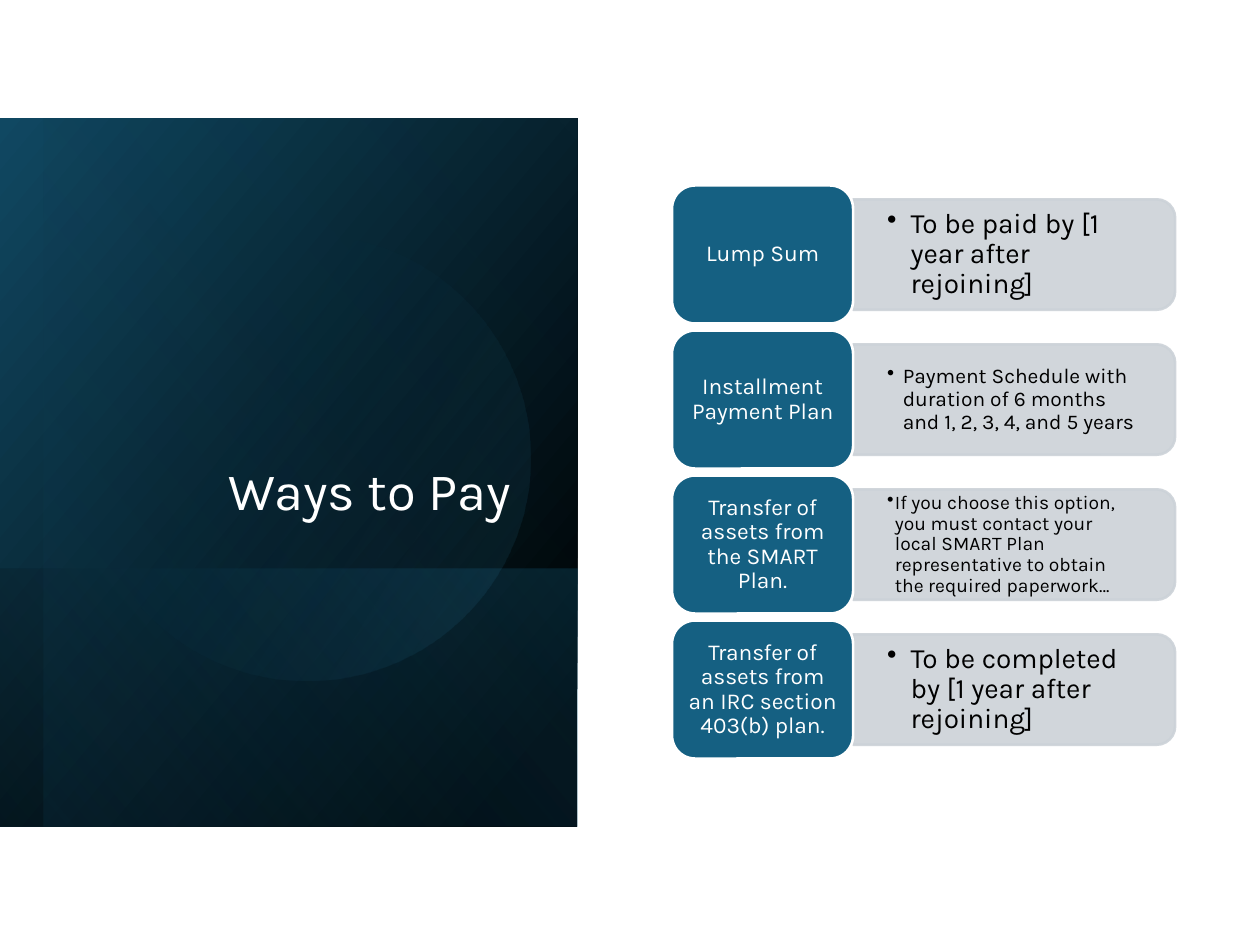
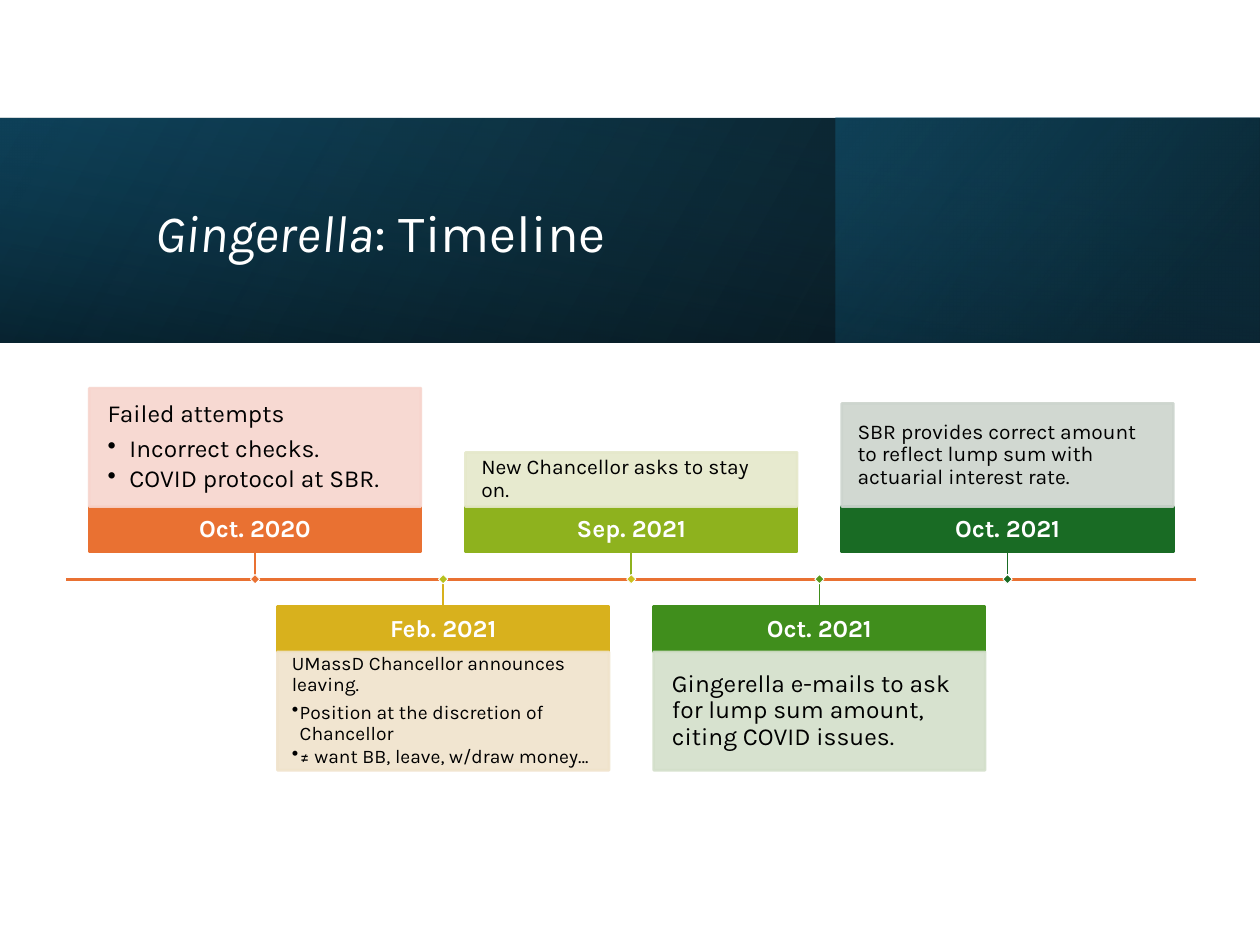
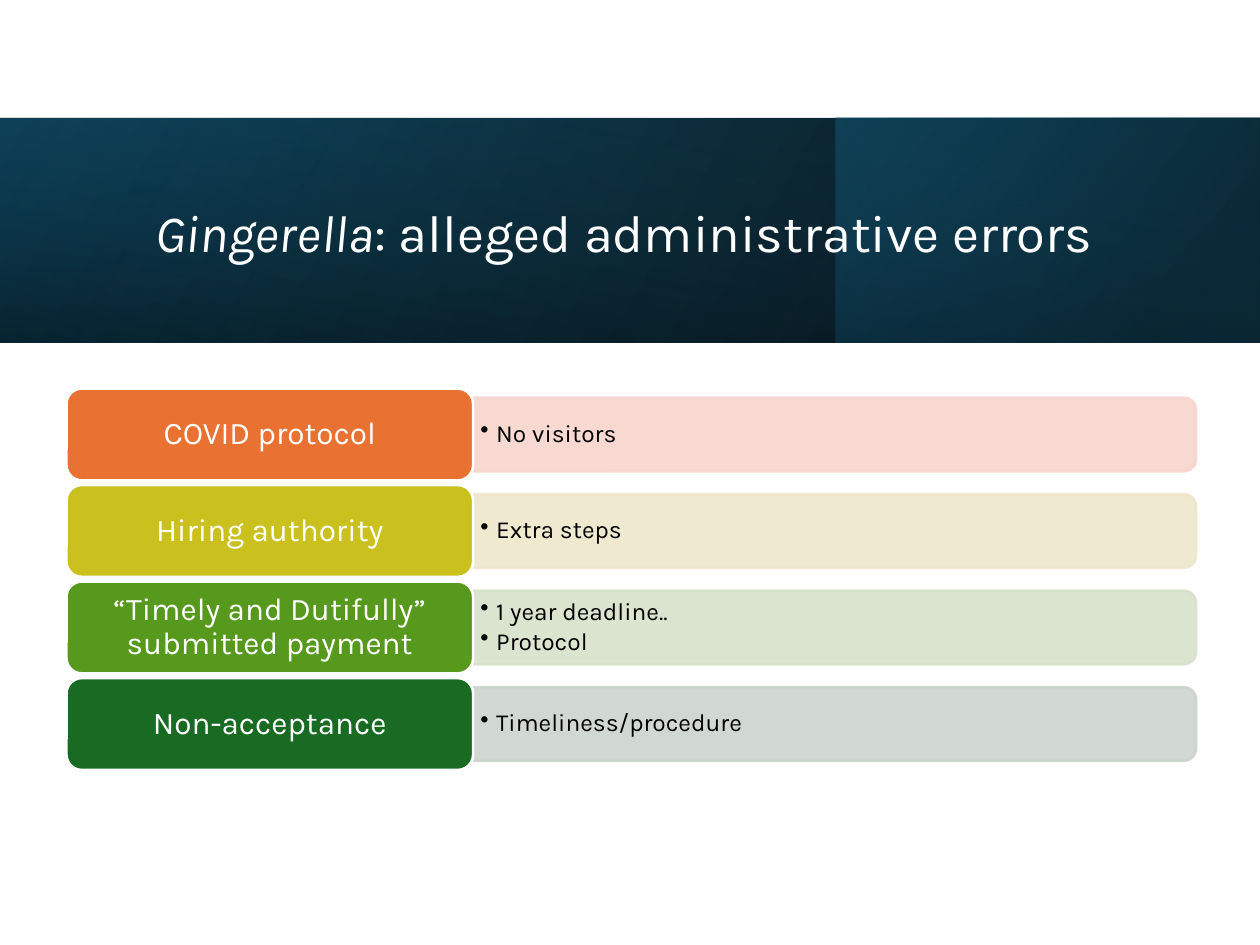
from lxml.etree import SubElement
from pptx import Presentation
from pptx.dml.color import RGBColor
from pptx.enum.shapes import MSO_CONNECTOR, MSO_SHAPE
from pptx.enum.text import MSO_ANCHOR as Anchor, PP_ALIGN as Align
from pptx.oxml.ns import qn
from pptx.util import Pt

FONT = "Karla"
COLORS = {
    "white": "FFFFFF", "black": "000000", "blue": "156082",
    "deep": "104862", "night": "0B3041", "sky": "46B1E1",
    "mist": "CCD2D8", "orange": "E97132", "gold": "D8B11D",
    "yellow": "CBC11E", "lemon": "B7C11E", "lime": "8EB21E",
    "leaf": "56991D", "grass": "408E1C", "forest": "196B24",
    "pale_orange": "F7D5CE", "pale_gold": "F0E3CB",
    "pale_yellow": "EEE7CB", "pale_lime": "E5E8CA",
    "pale_leaf": "D8E2CA", "pale_grass": "D3DFCA",
    "pale_forest": "CCD4CD",
}
CORNER_INSET = 0.0488


def rgb(name):
    return RGBColor.from_string(COLORS[name])


def set_alphas(shape, alphas):
    for color, alpha in zip(shape._element.spPr.iter(qn("a:srgbClr")), alphas):
        SubElement(color, qn("a:alpha"), val=str(alpha * 1000))


def add_block(slide, kind, box, turn=0):
    left, top, width, height = box
    if turn % 180:
        left += (width - height) / 2
        top += (height - width) / 2
        width, height = height, width
    block = slide.shapes.add_shape(kind, Pt(left), Pt(top), Pt(width), Pt(height))
    block.rotation = turn
    block.shadow.inherit = False
    return block


def add_solid(slide, kind, box, fill, line, weight=1.5, turn=0, alpha=None):
    solid = add_block(slide, kind, box, turn)
    solid.fill.solid()
    solid.fill.fore_color.rgb = rgb(fill)
    solid.line.color.rgb = rgb(line)
    solid.line.width = Pt(weight)
    if alpha:
        set_alphas(solid, [alpha, alpha])
    return solid


def add_glow(slide, box, stops, angle, turn=0, kind=MSO_SHAPE.RECTANGLE, flip=True):
    glow = add_block(slide, kind, box, turn)
    if flip:
        glow._element.spPr.xfrm.set("flipH", "1")
    glow.fill.gradient()
    glow.fill.gradient_angle = 360 - angle
    for stop, (position, color, _) in zip(glow.fill.gradient_stops, stops):
        stop.position = position / 100
        stop.color.rgb = rgb(color)
    set_alphas(glow, [alpha for _, _, alpha in stops])
    glow.line.fill.background()


def set_frame(holder, insets, anchor=Anchor.MIDDLE):
    frame = holder.text_frame
    frame.word_wrap = True
    frame.vertical_anchor = anchor
    frame.margin_left = frame.margin_right = Pt(insets[0])
    frame.margin_top = frame.margin_bottom = Pt(insets[1])
    return frame


def add_textbox(slide, box):
    return slide.shapes.add_textbox(*(Pt(length) for length in box))


def add_run(paragraph, text, size, color, bold=False, italic=False):
    run = paragraph.add_run()
    run.text = text
    run.font.name = FONT
    run.font.size = Pt(size)
    run.font.bold = bold
    run.font.italic = italic
    run.font.color.rgb = rgb(color)


def next_paragraph(frame, align=Align.LEFT, after=0):
    first = frame.paragraphs[0]
    paragraph = frame.add_paragraph() if first.runs else first
    paragraph.alignment = align
    paragraph.line_spacing = 0.9
    paragraph.space_after = Pt(after)
    return paragraph


def add_label(frame, text, size, bold=False):
    paragraph = next_paragraph(frame, Align.CENTER, 0.35 * size)
    add_run(paragraph, text, size, "white", bold)


def add_bullets(frame, texts, size, indent):
    for text in texts:
        paragraph = next_paragraph(frame, after=0.15 * size)
        props = paragraph._p.get_or_add_pPr()
        props.set("marL", str(Pt(indent)))
        props.set("indent", str(-Pt(indent)))
        SubElement(props, qn("a:buChar"), char="•")
        add_run(paragraph, text, size, "black")


def add_title(slide, box, runs, align=Align.LEFT, anchor=Anchor.MIDDLE):
    frame = set_frame(add_textbox(slide, box), (7.2, 3.6), anchor)
    paragraph = next_paragraph(frame, align)
    for text, italic in runs:
        add_run(paragraph, text, 30, "white", italic=italic)


def add_case_banner(slide, subject, box=(0, 67.5, 720, 128)):
    left, top, width, height = box
    add_glow(slide, box, [(0, "black", 96), (100, "deep", 100)], 330)
    add_glow(slide, (left + 477.5, top, width - 478, height),
             [(19, "night", 68), (100, "blue", 48)], 320)
    add_glow(slide, box, [(23, "deep", 16), (99, "black", 45)], 350, turn=270)
    add_title(slide, (left + 81.5, top + 20.5, 574, 93),
              [("Gingerella", True), (": " + subject, False)])


def add_side_panel(slide, box=(0, 67.5, 330, 405)):
    left, top, width, height = box
    add_glow(slide, box, [(8, "black", 100), (100, "deep", 100)], 50, 90)
    add_glow(slide, (left, top + 257.5, width, height - 257.5),
             [(2, "blue", 29), (100, "black", 30)], 130, 90)
    add_glow(slide, (left + 25, top, width - 25, height),
             [(0, "black", 0), (99, "blue", 11)], 130, 90)
    add_glow(slide, (left + 48, top + 66.5, 255, 255),
             [(39, "blue", 0), (100, "sky", 15)], 290, 101.6,
             MSO_SHAPE.OVAL, flip=False)
    add_title(slide, (left + 49, top + 34.5, 250, 200),
              [("Ways to Pay", False)], Align.RIGHT, Anchor.BOTTOM)


def add_label_rows(slide, box, rows, label_size, body_inset):
    left, top, width, height = box
    row_height = height / (len(rows) + 0.05 * (len(rows) - 1))
    label_width = 0.36 * width
    body_left, body_width = left + label_width, width - label_width
    body_height = 0.8 * row_height
    corner = CORNER_INSET * body_height
    for index, (label, fill, tint, texts, size, indent) in enumerate(rows):
        row_top = top + index * 1.05 * row_height
        body_top = row_top + 0.1 * row_height
        add_solid(slide, MSO_SHAPE.ROUND_2_SAME_RECTANGLE,
                  (body_left, body_top, body_width, body_height),
                  tint, tint, turn=90, alpha=90)
        body = add_textbox(slide, (body_left, body_top + corner,
                                   body_width - corner, body_height - 2 * corner))
        add_bullets(set_frame(body, (body_inset, body_inset / 2)), texts, size, indent)
        tab = add_solid(slide, MSO_SHAPE.ROUNDED_RECTANGLE,
                        (left, row_top, label_width, row_height), fill, "white")
        add_label(set_frame(tab, (0.3 * label_size, 0.15 * label_size)),
                  label, label_size)


def add_rule(slide, start, end, color, weight):
    rule = slide.shapes.add_connector(MSO_CONNECTOR.STRAIGHT,
                                      *(Pt(length) for length in start + end))
    rule.line.color.rgb = rgb(color)
    rule.line.width = Pt(weight)
    SubElement(rule._element.spPr, qn("a:effectLst"))
    return rule


def add_event(slide, left, axis, above, event):
    date, fill, tint, marker, height, size, lead, points, indent = event
    width, date_height, stem = 189.5, 26, 15.5
    center = left + width / 2
    if above:
        date_top = axis - stem - date_height
        body_top, date_edge, side = date_top - height, axis - stem, 2
    else:
        date_top = date_edge = axis + stem
        body_top, side = date_top + date_height, 0
    header = add_solid(slide, MSO_SHAPE.RECTANGLE,
                       (left, date_top, width, date_height), fill, fill)
    add_label(set_frame(header, (5.6, 5.6)), date, 14, True)
    body = add_solid(slide, MSO_SHAPE.RECTANGLE,
                     (left, body_top, width, height), tint, tint, alpha=90)
    frame = set_frame(body, (0.75 * size, 0.75 * size))
    add_run(next_paragraph(frame, after=0.35 * size), lead, size, "black")
    add_bullets(frame, points, size, indent)
    stem_rule = add_rule(slide, (center, date_edge), (center, axis), fill, 1)
    stem_rule.begin_connect(header, side)
    add_solid(slide, MSO_SHAPE.RECTANGLE, (center - 1.9, axis - 1.9, 3.8, 3.8),
              marker, "white", 0.5, 45)


def add_timeline(slide, box, events):
    left, top, width, height = box
    axis = top + height / 2
    add_rule(slide, (left, axis), (left + width, axis), "orange", 1.5)
    for index, event in enumerate(events):
        add_event(slide, left + 13 + index * 107.5, axis, index % 2 == 0, event)


PAYMENTS = [
    ("Lump Sum", "blue", "mist", ["To be paid by [1 year after rejoining]"], 16, 13.5),
    ("Installment Payment Plan", "blue", "mist",
     ["Payment Schedule with duration of 6 months and 1, 2, 3, 4, and 5 years"], 12, 9),
    ("Transfer of assets from the SMART Plan.", "blue", "mist",
     ["If you choose this option, you must contact your local SMART Plan "
      "representative to obtain the required paperwork…"], 11, 4.5),
    ("Transfer of assets from an IRC section 403(b) plan.", "blue", "mist",
     ["To be completed by [1 year after rejoining]"], 16, 13.5),
]
EVENTS = [
    ("Oct. 2020", "orange", "pale_orange", "orange", 67.7, 14, "Failed attempts",
     ["Incorrect checks.", "COVID protocol at SBR."], 12.5),
    ("Feb. 2021", "gold", "pale_gold", "lemon", 67.7, 11,
     "UMassD Chancellor announces leaving.",
     ["Position at the discretion of Chancellor",
      "≠ want BB, leave, w/draw money…"], 4.5),
    ("Sep. 2021", "lime", "pale_lime", "yellow", 31, 12,
     "New Chancellor asks to stay on.", [], 0),
    ("Oct. 2021", "grass", "pale_grass", "leaf", 67.7, 14,
     "Gingerella e-mails to ask for lump sum amount, citing COVID issues.", [], 0),
    ("Oct. 2021", "forest", "pale_forest", "forest", 59, 12,
     "SBR provides correct amount to reflect lump sum with actuarial interest rate.",
     [], 0),
]
ERRORS = [
    ("COVID protocol", "orange", "pale_orange", ["No visitors"], 14, 9),
    ("Hiring authority", "yellow", "pale_yellow", ["Extra steps"], 14, 9),
    ("“Timely and Dutifully” submitted payment", "leaf", "pale_leaf",
     ["1 year deadline..", "Protocol"], 14, 9),
    ("Non-acceptance", "forest", "pale_forest", ["Timeliness/procedure"], 14, 9),
]


def main():
    deck = Presentation()
    deck.slide_width, deck.slide_height = Pt(720), Pt(540)
    ways, timeline, errors = (deck.slides.add_slide(deck.slide_layouts[6])
                              for _ in range(3))
    add_side_panel(ways)
    add_label_rows(ways, (384, 106, 287.5, 327.5), PAYMENTS, 13, 19.4)
    add_case_banner(timeline, "Timeline")
    add_timeline(timeline, (38, 221, 645.5, 220), EVENTS)
    add_case_banner(errors, "alleged administrative errors")
    add_label_rows(errors, (38, 222, 645.5, 218), ERRORS, 18, 4.2)
    deck.save("out.pptx")


if __name__ == "__main__":
    main()
